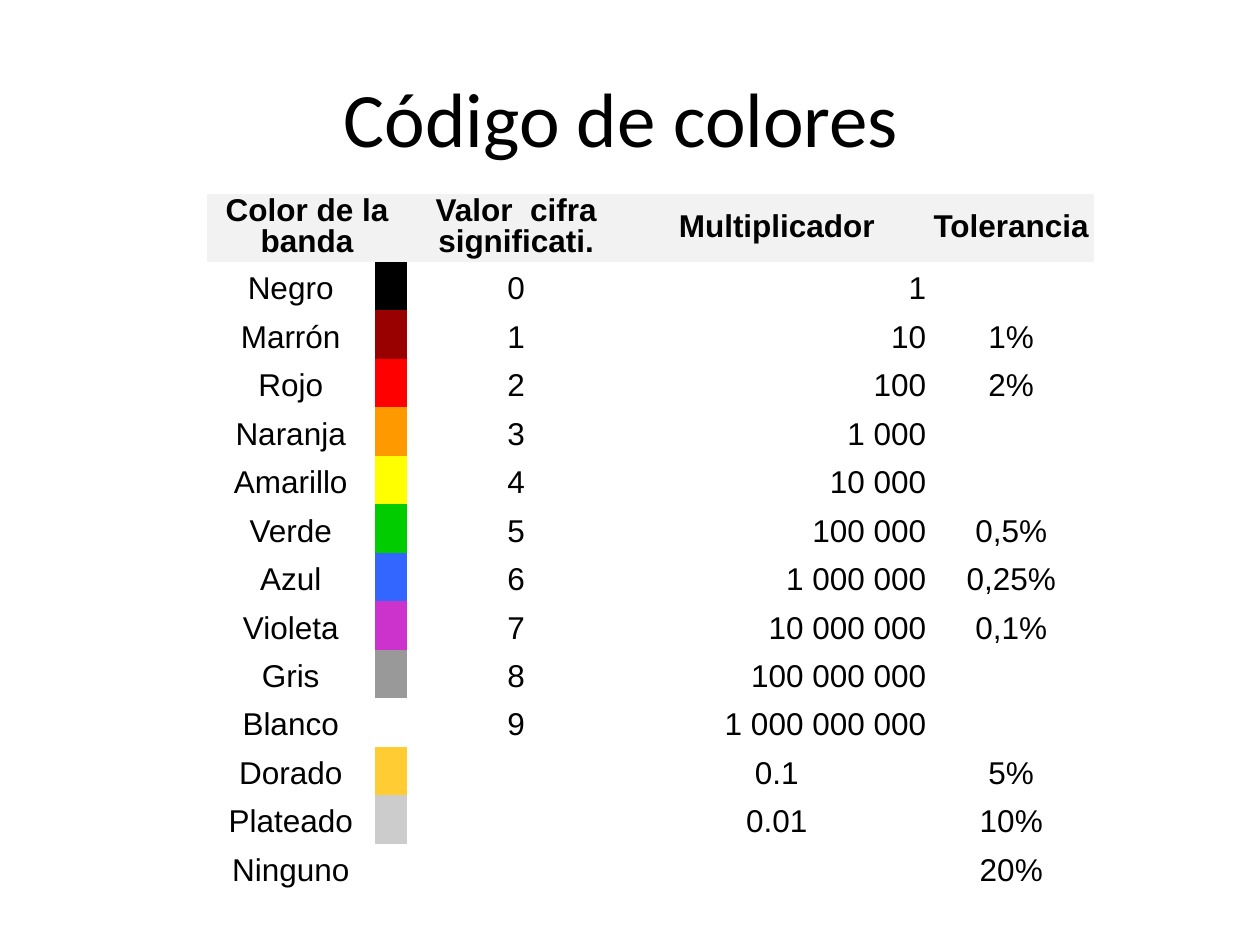
from dataclasses import dataclass

from pptx import Presentation
from pptx import util as u
from pptx.dml.color import RGBColor
from pptx.enum import text
from pptx.oxml.ns import qn


@dataclass(frozen=True)
class Theme:
    ink: str = "000000"
    paper: str = "FFFFFF"
    header: str = "F2F2F2"
    title_font: str = "Calibri"
    table_font: str = "Arial"
    title_size: int = 44
    table_size: int = 18


THEME = Theme()
CENTER, RIGHT = text.PP_ALIGN.CENTER, text.PP_ALIGN.RIGHT
NO_STYLE_NO_GRID = "{2D5ABB26-0587-4C30-8999-92F81FD0307C}"

COLUMN_WIDTHS = (3.38, 0.66, 4.39, 6.12, 3.33)
TABLE_HEIGHT, HEADER_HEIGHT = 13.87, 1.35
HEADERS = ("Color de la banda", "", "Valor  cifra significati.", "Multiplicador", "Tolerancia")

# Band name, band colour, digit, multiplier, tolerance
BANDS = (
    ("Negro", "000000", "0", "1", ""),
    ("Marrón", "990000", "1", "10", "1%"),
    ("Rojo", "FF0000", "2", "100", "2%"),
    ("Naranja", "FF9900", "3", "1 000", ""),
    ("Amarillo", "FFFF00", "4", "10 000", ""),
    ("Verde", "00CC00", "5", "100 000", "0,5%"),
    ("Azul", "3366FF", "6", "1 000 000", "0,25%"),
    ("Violeta", "CC33CC", "7", "10 000 000", "0,1%"),
    ("Gris", "999999", "8", "100 000 000", ""),
    ("Blanco", "FFFFFF", "9", "1 000 000 000", ""),
    ("Dorado", "FFCC33", "", "0.1", "5%"),
    ("Plateado", "CCCCCC", "", "0.01", "10%"),
    ("Ninguno", "FFFFFF", "", "", "20%"),
)


def add_run(paragraph, words, font_name, size, bold=False):
    run = paragraph.add_run()
    run.text = words
    run.font.name = font_name
    run.font.size = u.Pt(size)
    run.font.bold = bold
    run.font.color.rgb = RGBColor.from_string(THEME.ink)


def add_title(slide, words):
    shape = slide.shapes.add_textbox(u.Cm(1.27), u.Cm(0.76), u.Cm(22.86), u.Cm(3.18))
    frame = shape.text_frame
    frame.word_wrap = True
    frame.vertical_anchor = text.MSO_ANCHOR.MIDDLE
    paragraph = frame.paragraphs[0]
    paragraph.alignment = CENTER
    add_run(paragraph, words, THEME.title_font, THEME.title_size)


def fill_cell(cell, words, fill, spacing=1.15, alignment=CENTER, bold=False):
    cell.fill.solid()
    cell.fill.fore_color.rgb = RGBColor.from_string(fill)
    cell.vertical_anchor = text.MSO_ANCHOR.MIDDLE
    cell.margin_left = cell.margin_right = u.Cm(0.05)
    cell.margin_top = cell.margin_bottom = u.Cm(0.05)
    if words:
        paragraph = cell.text_frame.paragraphs[0]
        paragraph.alignment = alignment
        paragraph.line_spacing = spacing
        add_run(paragraph, words, THEME.table_font, THEME.table_size, bold)


def add_color_table(slide):
    shape = slide.shapes.add_table(
        len(BANDS) + 1, len(COLUMN_WIDTHS), u.Cm(4.17), u.Cm(3.91),
        u.Cm(sum(COLUMN_WIDTHS)), u.Cm(TABLE_HEIGHT))
    table = shape.table
    table.horz_banding = False
    table._tbl.tblPr.find(qn("a:tableStyleId")).text = NO_STYLE_NO_GRID

    # Grid
    for column, width in zip(table.columns, COLUMN_WIDTHS):
        column.width = u.Cm(width)
    for row in table.rows:
        row.height = u.Cm((TABLE_HEIGHT - HEADER_HEIGHT) / len(BANDS))
    table.rows[0].height = u.Cm(HEADER_HEIGHT)

    # Header
    for column, words in enumerate(HEADERS):
        fill_cell(table.cell(0, column), words, THEME.header, u.Pt(18), bold=True)
    table.cell(0, 0).merge(table.cell(0, 1))

    # Bands: whole multipliers align right, fractions are centred
    for row, (name, color, digit, multiplier, tolerance) in enumerate(BANDS, start=1):
        alignment = CENTER if "." in multiplier else RIGHT
        fill_cell(table.cell(row, 0), name, THEME.paper)
        fill_cell(table.cell(row, 1), "", color)
        fill_cell(table.cell(row, 2), digit, THEME.paper)
        fill_cell(table.cell(row, 3), multiplier, THEME.paper, alignment=alignment)
        fill_cell(table.cell(row, 4), tolerance, THEME.paper)


def main():
    presentation = Presentation()
    presentation.slide_width, presentation.slide_height = u.Cm(25.4), u.Cm(19.05)
    slide = presentation.slides.add_slide(presentation.slide_layouts[6])
    add_title(slide, "Código de colores ")
    add_color_table(slide)
    presentation.save("out.pptx")


if __name__ == "__main__":
    main()
